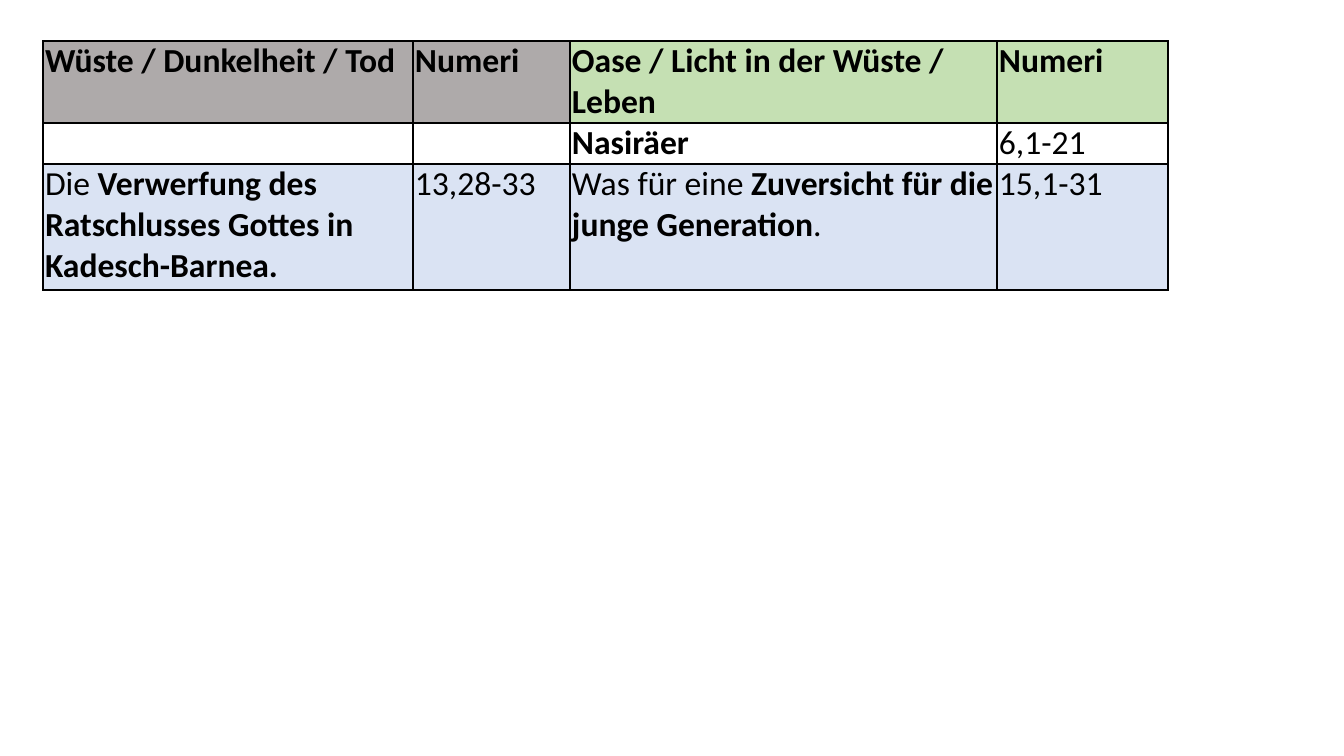
from lxml import etree
from pptx import Presentation
from pptx import util as u
from pptx.dml.color import RGBColor
from pptx.oxml.ns import qn

PX = 914400 / 100.8
COLORS = {"desert": "AEAAAA", "oasis": "C5E0B3", "blue": "DAE3F3", "ink": "000000"}

# Column widths and row heights in px
COLS = [370, 157, 427, 171]
ROWS = [81, 40, 126]

# Each cell: fill name and runs of (words, bold)
CELLS = [
    [("desert", [("Wüste / Dunkelheit / Tod", True)]),
     ("desert", [("Numeri", True)]),
     ("oasis", [("Oase / Licht in der Wüste / Leben", True)]),
     ("oasis", [("Numeri", True)])],
    [(None, []),
     (None, []),
     (None, [("Nasiräer", True)]),
     (None, [("6,1-21", False)])],
    [("blue", [("Die ", False),
               ("Verwerfung des Ratschlusses Gottes in Kadesch-Barnea.", True)]),
     ("blue", [("13,28-33", False)]),
     ("blue", [("Was für eine ", False),
               ("Zuversicht für die junge Generation", True), (".", False)]),
     ("blue", [("15,1-31", False)])],
]


def px(n):
    return u.Emu(round(n * PX))


def rgb(name):
    return RGBColor.from_string(COLORS[name])


def add_edges(cell):
    """Draw a thin line on all four sides; must run before the fill is set."""
    props = cell._tc.get_or_add_tcPr()
    for side in ("lnL", "lnR", "lnT", "lnB"):
        line = etree.SubElement(props, qn("a:" + side), w=str(u.Pt(1)))
        fill = etree.SubElement(line, qn("a:solidFill"))
        etree.SubElement(fill, qn("a:srgbClr"), val=COLORS["ink"])


def fill_cell(cell, shade, runs):
    cell.margin_left = cell.margin_right = px(2)
    cell.margin_top = cell.margin_bottom = 0
    add_edges(cell)
    if shade:
        cell.fill.solid()
        cell.fill.fore_color.rgb = rgb(shade)
    else:
        cell.fill.background()
    para = cell.text_frame.paragraphs[0]
    for words, bold in runs:
        run = para.add_run()
        run.text = words
        font = run.font
        font.name, font.size, font.bold = "Calibri", u.Pt(24), bold
        font.color.rgb = rgb("ink")


def add_grid(slide, left, top):
    frame = slide.shapes.add_table(len(ROWS), len(COLS), px(left), px(top),
                                   px(sum(COLS)), px(sum(ROWS)))
    table = frame.table
    table.first_row = table.horz_banding = False
    for col, width in zip(table.columns, COLS):
        col.width = px(width)
    for row, height, cells in zip(table.rows, ROWS, CELLS):
        row.height = px(height)
        for cell, (shade, runs) in zip(row.cells, cells):
            fill_cell(cell, shade, runs)


def main():
    deck = Presentation()
    deck.slide_width, deck.slide_height = px(1344), px(756)
    slide = deck.slides.add_slide(deck.slide_layouts[6])
    add_grid(slide, 43, 41)
    deck.save("out.pptx")


if __name__ == "__main__":
    main()
